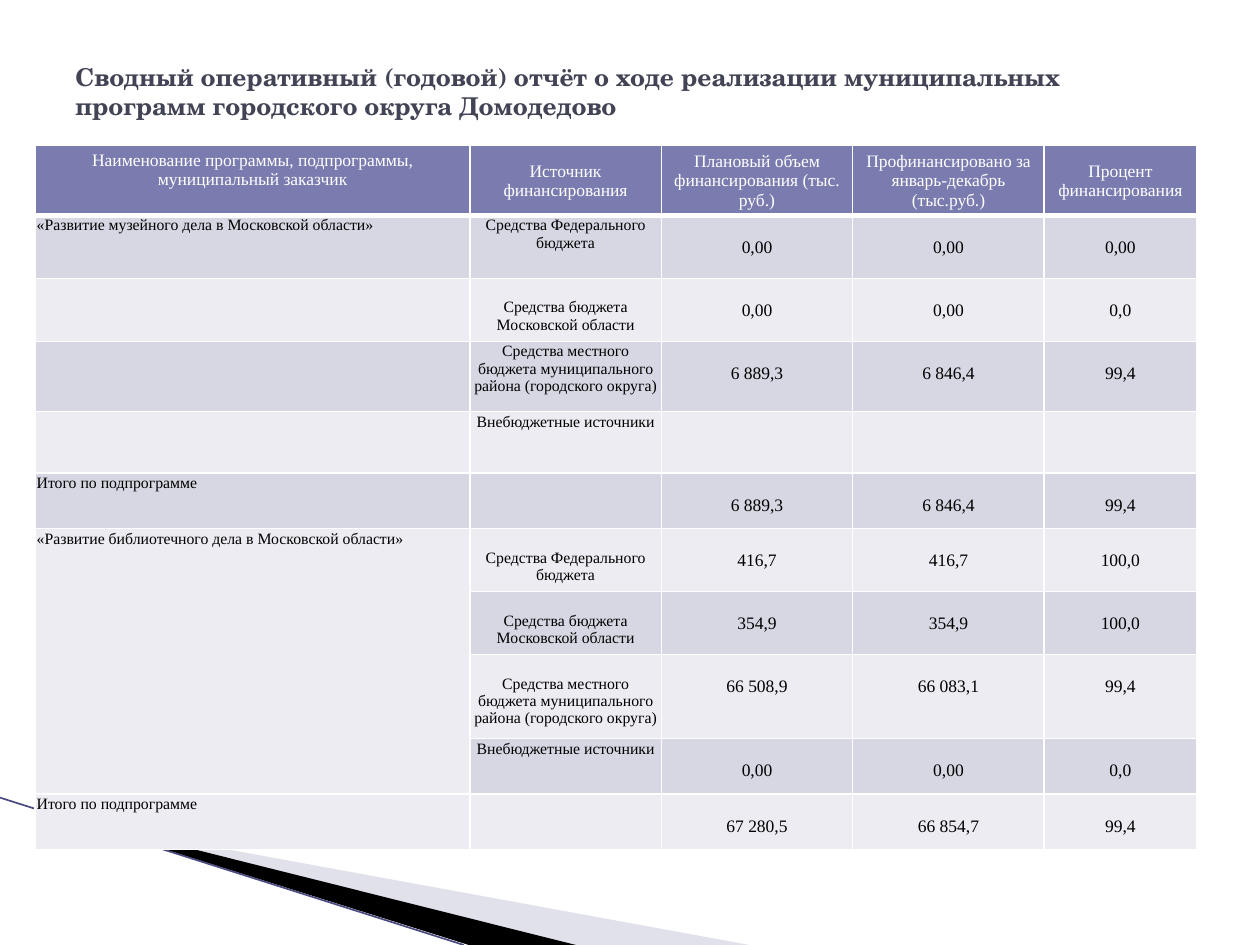
from lxml.etree import SubElement
from pptx import Presentation
from pptx.dml.color import RGBColor
from pptx.enum.shapes import MSO_CONNECTOR as Connector
from pptx.enum.text import MSO_ANCHOR as Anchor, PP_ALIGN as Align
from pptx.oxml import parse_xml
from pptx.oxml.ns import nsdecls, qn
from pptx.util import Cm, Pt

COLORS = {
    "title": "424456", "header": "7A7BAE", "dark band": "D7D7E3",
    "light band": "ECECF2", "white": "FFFFFF", "black": "000000",
    "pale wedge": "B6B6D1", "edge": "4A4B80",
}
TITLE = ("Сводный оперативный (годовой) отчёт о ходе реализации "
         "муниципальных программ городского округа Домодедово")
HEADERS = [
    "Наименование программы, подпрограммы, муниципальный заказчик",
    "Источник финансирования",
    "Плановый объем финансирования (тыс. руб.)",
    "Профинансировано за январь-декабрь (тыс.руб.)",
    "Процент финансирования",
]
FEDERAL = "Средства Федерального бюджета"
REGIONAL = "Средства бюджета Московской области"
LOCAL = "Средства местного бюджета муниципального района (городского округа)"
OTHER = "Внебюджетные источники"
TOTAL = "Итого по подпрограмме"
ROWS = [
    ("«Развитие музейного дела в Московской области»", FEDERAL, "0,00", "0,00", "0,00"),
    ("", REGIONAL, "0,00", "0,00", "0,0"),
    ("", LOCAL, "6 889,3", "6 846,4", "99,4"),
    ("", OTHER, "", "", ""),
    (TOTAL, "", "6 889,3", "6 846,4", "99,4"),
    ("«Развитие библиотечного дела в Московской области»", FEDERAL, "416,7", "416,7", "100,0"),
    ("", REGIONAL, "354,9", "354,9", "100,0"),
    ("", LOCAL, "66 508,9", "66 083,1", "99,4"),
    ("", OTHER, "0,00", "0,00", "0,0"),
    (TOTAL, "", "67 280,5", "66 854,7", "99,4"),
]
LOWERED_SOURCES = {2, 6, 7, 8}  # rows whose funding source starts one line down
MERGED_ROWS = (6, 9)
COLUMN_WIDTHS = [8.76, 3.86, 3.86, 3.86, 3.07]
ROW_HEIGHTS = [1.42, 1.27, 1.27, 1.42, 0.89, 1.12, 1.27, 1.27, 1.69, 1.12, 1.12]
TABLE_LEFT, TABLE_TOP = 0.71, 2.92
INSET = 0.03
LINE_DROP = {9: 0.38, 10: 0.43}  # one text line in cm, by font size

WEDGES = [
    ("pale wedge", 40, [(1.4, 16.54), (15.11, 19.05), (11.58, 19.05), (1.4, 16.51)]),
    ("black", 100, [(1.35, 16.48), (11.61, 19.05), (9.45, 19.05), (1.37, 16.51)]),
]
EDGE = [(0, 16.08), (9.35, 19.05)]


def rgb(name):
    return RGBColor.from_string(COLORS[name])


def write(para, text, align, **formats):
    para.alignment = align
    span = para.add_run()
    span.text = text
    span.font.color.rgb = rgb(formats.pop("color"))
    for name, value in formats.items():
        setattr(span.font, name, value)


def add_wedge(page, color, opacity, points):
    corners = [(Cm(x), Cm(y)) for x, y in points]
    builder = page.shapes.build_freeform(*corners[0])
    builder.add_line_segments(corners[1:], close=True)
    wedge = builder.convert_to_shape()
    wedge.shadow.inherit = False
    wedge.line.fill.background()
    wedge.fill.solid()
    wedge.fill.fore_color.rgb = rgb(color)
    if opacity < 100:
        tint = wedge.fill._xPr.find(".//" + qn("a:srgbClr"))
        SubElement(tint, qn("a:alpha"), val=str(opacity * 1000))


def add_edge(page):
    ends = [Cm(value) for point in EDGE for value in point]
    edge = page.shapes.add_connector(Connector.STRAIGHT, *ends)
    edge.line.color.rgb = rgb("edge")
    edge.line.width = Pt(0.95)
    SubElement(edge._element.spPr, qn("a:effectLst"))


def set_borders(cell, bottom):
    properties = cell._tc.get_or_add_tcPr()
    for index, (side, points) in enumerate([("L", 1), ("R", 1), ("T", 1), ("B", bottom)]):
        properties.insert(index, parse_xml(
            f'<a:ln{side} {nsdecls("a")} w="{Pt(points)}"><a:solidFill>'
            f'<a:srgbClr val="{COLORS["white"]}"/></a:solidFill></a:ln{side}>'))


def fill_cell(cell, row, column, text):
    header = row == 0
    size = 10 if header or column > 1 else 9
    lowered = not header and (column > 1 or column == 1 and row in LOWERED_SOURCES)
    raised = header and column == 0
    margins = {
        "margin_left": INSET, "margin_right": INSET,
        "margin_top": INSET + (LINE_DROP[size] if lowered else 0),
        "margin_bottom": LINE_DROP[size] if raised else 0,
    }
    for name, value in margins.items():
        setattr(cell, name, Cm(value))
    cell.vertical_anchor = Anchor.MIDDLE if header else Anchor.TOP
    band = "header" if header else "dark band" if row % 2 else "light band"
    cell.fill.solid()
    cell.fill.fore_color.rgb = rgb(band)
    set_borders(cell, 3 if header else 1)
    if text:
        write(cell.text_frame.paragraphs[0], text,
              Align.CENTER if header or column else Align.LEFT,
              name="Times New Roman", size=Pt(size), bold=False,
              color="white" if header else "black")


def add_report_table(page):
    table = page.shapes.add_table(
        len(ROWS) + 1, len(HEADERS), Cm(TABLE_LEFT), Cm(TABLE_TOP),
        Cm(sum(COLUMN_WIDTHS)), Cm(sum(ROW_HEIGHTS))).table
    for column, width in zip(table.columns, COLUMN_WIDTHS):
        column.width = Cm(width)
    for row, height in zip(table.rows, ROW_HEIGHTS):
        row.height = Cm(height)
    for row, texts in enumerate([HEADERS, *ROWS]):
        for column, text in enumerate(texts):
            fill_cell(table.cell(row, column), row, column, text)
    first, last = MERGED_ROWS
    table.cell(first, 0).merge(table.cell(last, 0))


def add_title(page):
    box = page.shapes.add_textbox(Cm(1.27), Cm(0.76), Cm(22.86), Cm(2.16))
    frame = box.text_frame
    frame.word_wrap = True
    frame.vertical_anchor = Anchor.MIDDLE
    write(frame.paragraphs[0], TITLE, Align.LEFT, name="TeX Gyre Schola",
          size=Pt(14), bold=True, color="title")


def main():
    deck = Presentation()
    deck.slide_width, deck.slide_height = Cm(25.4), Cm(19.05)
    page = deck.slides.add_slide(deck.slide_layouts[6])
    for wedge in WEDGES:
        add_wedge(page, *wedge)
    add_edge(page)
    add_report_table(page)
    add_title(page)
    deck.save("out.pptx")


if __name__ == "__main__":
    main()
